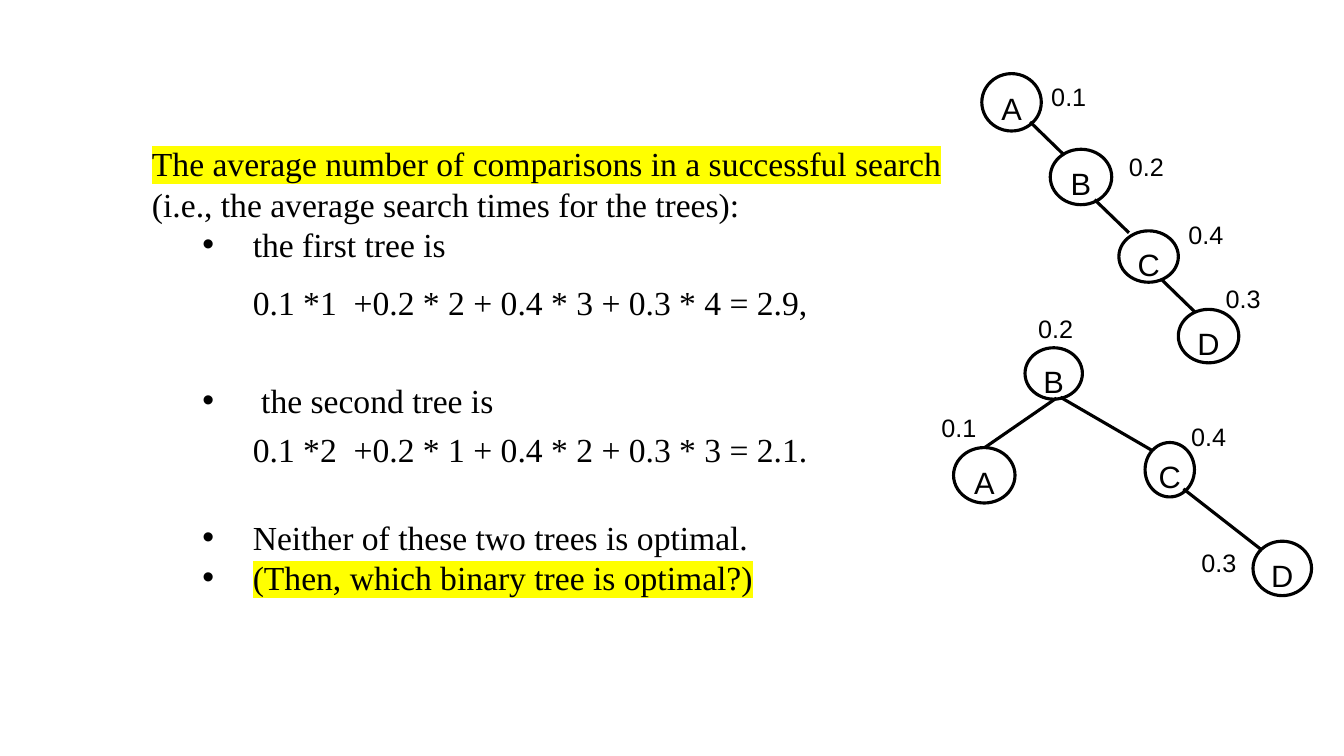
"""Build a slide comparing average search times of two binary search trees."""
from dataclasses import dataclass

from lxml.etree import SubElement
from pptx import Presentation
from pptx.dml.color import RGBColor
from pptx.enum.shapes import MSO_CONNECTOR, MSO_SHAPE
from pptx.enum.text import MSO_ANCHOR, PP_ALIGN
from pptx.oxml.ns import qn
from pptx.util import Pt

BODY = [
    {"text": "The average number of comparisons in a successful search", "marked": True},
    {"text": "(i.e., the average search times for the trees):"},
    {"text": "the first tree is", "margin": 72, "bullet": True, "after": 12},
    {"text": "0.1 *1  +0.2 * 2 + 0.4 * 3 + 0.3 * 4 = 2.9,", "margin": 72, "after": 41},
    {"text": "the second tree is", "margin": 78, "bullet": True, "after": 6},
    {"text": "0.1 *2  +0.2 * 1 + 0.4 * 2 + 0.3 * 3 = 2.1.", "margin": 72, "after": 34},
    {"text": "Neither of these two trees is optimal.", "margin": 72, "bullet": True},
    {"text": "(Then, which binary tree is optimal?)", "margin": 72, "bullet": True,
     "marked": True},
]
BODY_AREA = (101.5, 98.3, 590, 335)

PROBABILITIES = {"A": "0.1", "B": "0.2", "C": "0.4", "D": "0.3"}

FIRST_TREE = {
    "nodes": [
        ("A", (701.3, 52.6, 42.5, 41), (743.8, 54.7)),
        ("B", (750.2, 106.6, 43.9, 39.6), (799.2, 104.4)),
        ("C", (799.2, 164.9, 42.5, 36.7), (841.7, 153.4)),
        ("D", (841.7, 221, 43.2, 38.2), (868.3, 198.7)),
    ],
    "edges": [
        (735.8, 87.1, 760.3, 110.9),
        (781.9, 142.6, 806.4, 166.3),
        (829.4, 199.4, 853.9, 223.2),
    ],
}
SECOND_TREE = {
    "nodes": [
        ("B", (732.2, 248.4, 41, 36.7), (734.4, 220.3)),
        ("A", (681.1, 319.7, 43.9, 39.6), (665.3, 290.9)),
        ("C", (817.9, 316.1, 35.3, 38.9), (843.8, 297.4)),
        ("D", (895, 386.6, 41.8, 38.9), (851, 387.4)),
    ],
    "edges": [
        (754.6, 284.4, 703.4, 319.7),
        (757.4, 283.7, 823, 321.8),
        (845.3, 349.2, 900.7, 392.4),
    ],
}


@dataclass(frozen=True)
class Theme:
    ink: str = "000000"
    paper: str = "FFFFFF"
    marker: str = "FFFF00"
    body_font: str = "Times New Roman"
    tree_font: str = "Arial"
    body_size: float = 24
    node_size: float = 22
    label_size: float = 18
    body_pitch: float = 29
    hanging: float = 36
    stroke: float = 2.25
    node_inset: float = 5.5
    label_area: tuple = (39.6, 28.8)


THEME = Theme()


def points(values):
    return [Pt(value) for value in values]


def write(para, text, *, font, size, align=PP_ALIGN.LEFT, pitch=None, after=0,
          margin=0, bullet=False, marked=False):
    para.alignment = align
    para.space_before = Pt(0)
    para.space_after = Pt(after)
    if pitch:
        para.line_spacing = Pt(pitch)
    properties = para._p.get_or_add_pPr()
    properties.set("marL", str(Pt(margin)))
    properties.set("indent", str(Pt(36 - margin if bullet else 0)))
    if bullet:
        SubElement(properties, qn("a:buFont"), typeface=THEME.tree_font)
        SubElement(properties, qn("a:buChar"), char="•")
    span = para.add_run()
    span.text = text
    span.font.name = font
    span.font.size = Pt(size)
    span.font.color.rgb = RGBColor.from_string(THEME.ink)
    if marked:
        run_properties = span.font._element
        highlight = SubElement(run_properties, qn("a:highlight"))
        SubElement(highlight, qn("a:srgbClr"), val=THEME.marker)
        run_properties.find(qn("a:solidFill")).addnext(highlight)


def add_body(page):
    frame = page.shapes.add_textbox(*points(BODY_AREA)).text_frame
    frame.word_wrap = True
    for index, line in enumerate(BODY):
        para = frame.add_paragraph() if index else frame.paragraphs[0]
        write(para, font=THEME.body_font, size=THEME.body_size,
              pitch=THEME.body_pitch, **line)


def add_node(page, name, area):
    node = page.shapes.add_shape(MSO_SHAPE.OVAL, *points(area))
    node.shadow.inherit = False
    node.fill.solid()
    node.fill.fore_color.rgb = RGBColor.from_string(THEME.paper)
    node.line.color.rgb = RGBColor.from_string(THEME.ink)
    node.line.width = Pt(THEME.stroke)
    frame = node.text_frame
    frame.vertical_anchor = MSO_ANCHOR.TOP
    frame.margin_left = frame.margin_right = frame.margin_bottom = Pt(0)
    frame.margin_top = Pt(THEME.node_inset)
    write(frame.paragraphs[0], name, font=THEME.tree_font, size=THEME.node_size,
          align=PP_ALIGN.CENTER)


def add_edge(page, ends):
    edge = page.shapes.add_connector(MSO_CONNECTOR.STRAIGHT, *points(ends))
    edge.line.color.rgb = RGBColor.from_string(THEME.ink)
    edge.line.width = Pt(THEME.stroke)
    SubElement(edge._element.spPr, qn("a:effectLst"))


def add_label(page, text, corner):
    frame = page.shapes.add_textbox(*points(corner + THEME.label_area)).text_frame
    frame.word_wrap = False
    write(frame.paragraphs[0], text, font=THEME.tree_font, size=THEME.label_size)


def add_tree(page, tree):
    for name, area, corner in tree["nodes"]:
        add_node(page, name, area)
        add_label(page, PROBABILITIES[name], corner)
    for ends in tree["edges"]:
        add_edge(page, ends)


def main():
    deck = Presentation()
    deck.slide_width, deck.slide_height = Pt(960), Pt(540)
    page = deck.slides.add_slide(deck.slide_layouts.get_by_name("Blank"))
    add_body(page)
    for tree in (FIRST_TREE, SECOND_TREE):
        add_tree(page, tree)
    deck.save("out.pptx")


if __name__ == "__main__":
    main()
